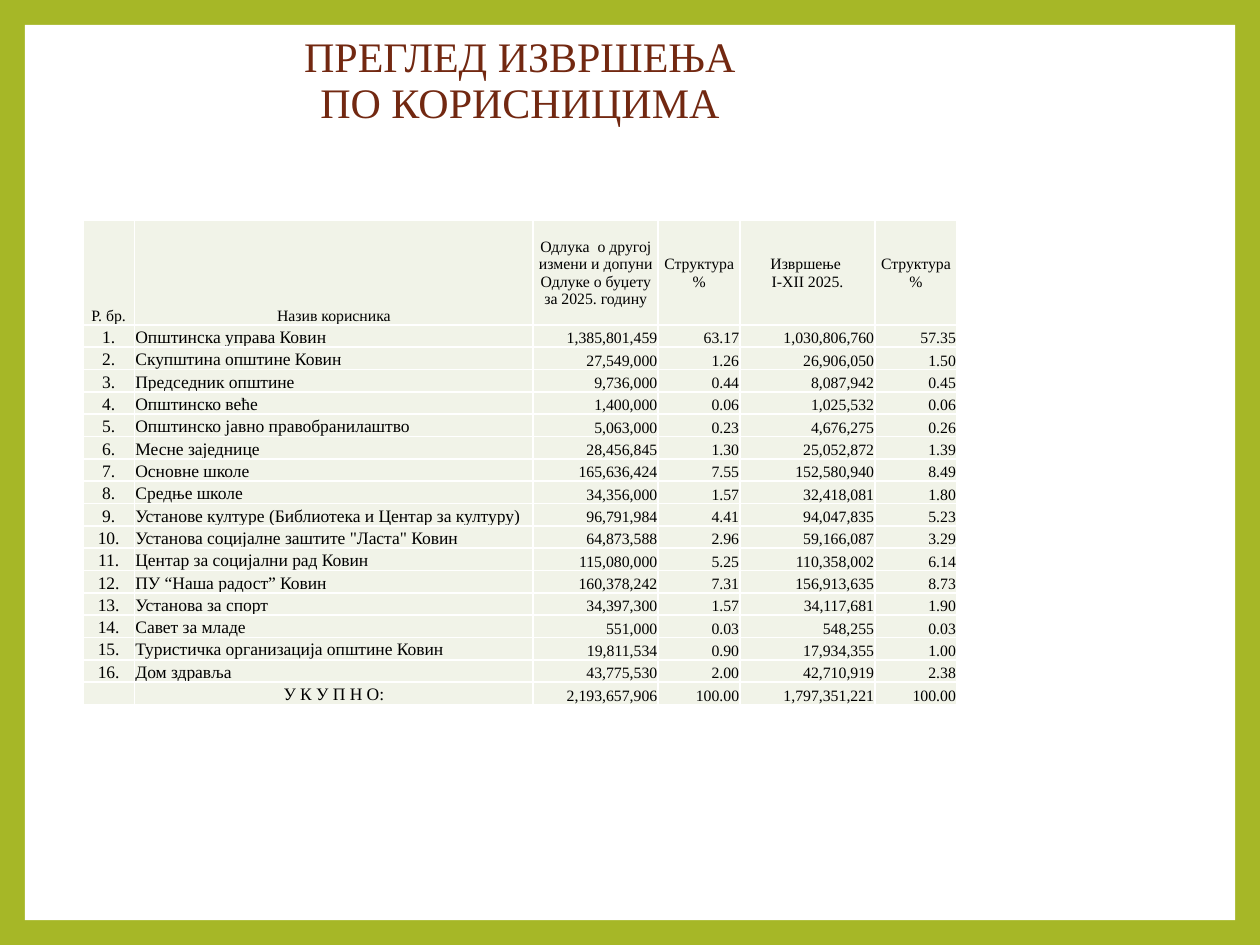
from lxml import etree
from pptx import Presentation
from pptx.dml.color import RGBColor
from pptx.enum import shapes, text
from pptx.oxml.ns import qn
from pptx.util import Cm, Pt

# Content ("\v" is a line break)
TITLE = "ПРЕГЛЕД ИЗВРШЕЊА\vПО КОРИСНИЦИМА"
HEADER = (
    "Р. бр.", "Назив корисника",
    "Одлука  о другој измени и допуни Одлуке о буџету за 2025. годину",
    "Структура\v%", "Извршење \vI-XII 2025.", "Структура\v%",
)
USERS = [
    ("Општинска управа Ковин", "1,385,801,459", "63.17", "1,030,806,760", "57.35"),
    ("Скупштина општине Ковин", "27,549,000", "1.26", "26,906,050", "1.50"),
    ("Председник општине", "9,736,000", "0.44", "8,087,942", "0.45"),
    ("Општинско веће", "1,400,000", "0.06", "1,025,532", "0.06"),
    ("Општинско јавно правобранилаштво", "5,063,000", "0.23", "4,676,275", "0.26"),
    ("Месне заједнице", "28,456,845", "1.30", "25,052,872", "1.39"),
    ("Основне школе", "165,636,424", "7.55", "152,580,940", "8.49"),
    ("Средње школе", "34,356,000", "1.57", "32,418,081", "1.80"),
    ("Установе културе (Библиотека и Центар за културу)",
     "96,791,984", "4.41", "94,047,835", "5.23"),
    ('Установа социјалне заштите "Ласта" Ковин',
     "64,873,588", "2.96", "59,166,087", "3.29"),
    ("Центар за социјални рад Ковин", "115,080,000", "5.25", "110,358,002", "6.14"),
    ("ПУ “Наша радост” Ковин", "160,378,242", "7.31", "156,913,635", "8.73"),
    ("Установа за спорт", "34,397,300", "1.57", "34,117,681", "1.90"),
    ("Савет за младе", "551,000", "0.03", "548,255", "0.03"),
    ("Туристичка организација општине Ковин",
     "19,811,534", "0.90", "17,934,355", "1.00"),
    ("Дом здравља", "43,775,530", "2.00", "42,710,919", "2.38"),
]
TOTAL = ("", "У К У П Н О:", "2,193,657,906", "100.00", "1,797,351,221", "100.00")

# Style
FONT = "Times New Roman"
COLORS = {"frame": "A6B727", "page": "FFFFFF", "title": "722811",
          "cell": "F1F3E8", "border": "FFFFFF", "text": "000000"}
COLUMN_WIDTHS = (1.04, 8.04, 2.52, 1.65, 2.72, 1.65)
HEADER_HEIGHT, ROW_HEIGHT = 2.1, 0.45
FRAME_WIDTH = Cm(0.5)
ALIGN, ANCHOR = text.PP_ALIGN, text.MSO_ANCHOR


def color(name):
    return RGBColor.from_string(COLORS[name])


def format_paragraph(paragraph, size, color_name, alignment):
    paragraph.alignment = alignment
    for run in paragraph.runs:
        run.font.name = FONT
        run.font.size = Pt(size)
        run.font.color.rgb = color(color_name)
    if not paragraph.runs:  # keeps an empty cell from stretching its row
        etree.SubElement(paragraph._p, qn("a:endParaRPr"), sz=str(size * 100))


def add_borders(cell):
    properties = cell._tc.get_or_add_tcPr()
    for side in ("lnL", "lnR", "lnT", "lnB"):
        line = etree.SubElement(properties, qn(f"a:{side}"), w=str(Pt(1)))
        fill = etree.SubElement(line, qn("a:solidFill"))
        etree.SubElement(fill, qn("a:srgbClr"), val=COLORS["border"])


def cell_style(row, column, is_total):
    """Return size, alignment and anchor for a table position."""
    if row == 0:
        return 9, ALIGN.CENTER, ANCHOR.BOTTOM if column < 2 else ANCHOR.MIDDLE
    if column >= 2:
        return 9, ALIGN.RIGHT, ANCHOR.BOTTOM
    centered = column == 0 or is_total
    return 10, ALIGN.CENTER if centered else ALIGN.LEFT, ANCHOR.BOTTOM


def fill_cell(cell, content, size, alignment, anchor):
    cell.text_frame.text = content
    format_paragraph(cell.text_frame.paragraphs[0], size, "text", alignment)
    cell.vertical_anchor = anchor
    cell.margin_left = cell.margin_right = cell.margin_top = Cm(0.02)
    cell.margin_bottom = 0
    add_borders(cell)
    cell.fill.solid()
    cell.fill.fore_color.rgb = color("cell")


def main():
    presentation = Presentation()
    presentation.slide_width, presentation.slide_height = Cm(25.4), Cm(19.05)
    slide = presentation.slides.add_slide(presentation.slide_layouts[6])

    # Green frame around a white page
    slide.background.fill.solid()
    slide.background.fill.fore_color.rgb = color("frame")
    page = slide.shapes.add_shape(
        shapes.MSO_SHAPE.RECTANGLE, FRAME_WIDTH, FRAME_WIDTH,
        presentation.slide_width - 2 * FRAME_WIDTH,
        presentation.slide_height - 2 * FRAME_WIDTH)
    page.shadow.inherit = False
    page.fill.solid()
    page.fill.fore_color.rgb = color("page")
    page.line.fill.background()

    # Title
    title = slide.shapes.add_textbox(0, Cm(0.25), Cm(20.96), Cm(2.8))
    title.text_frame.word_wrap = True
    title.text_frame.vertical_anchor = ANCHOR.MIDDLE
    title.text_frame.text = TITLE
    paragraph = title.text_frame.paragraphs[0]
    paragraph.line_spacing = 0.9
    format_paragraph(paragraph, 24, "title", ALIGN.CENTER)

    # Table
    numbered = [(f"{number}.", *user) for number, user in enumerate(USERS, 1)]
    rows = [HEADER, *numbered, TOTAL]
    heights = [HEADER_HEIGHT] + [ROW_HEIGHT] * (len(rows) - 1)
    table = slide.shapes.add_table(
        len(rows), len(HEADER), Cm(1.67), Cm(4.45),
        Cm(sum(COLUMN_WIDTHS)), Cm(sum(heights))).table
    table.first_row = table.horz_banding = False
    for column, width in zip(table.columns, COLUMN_WIDTHS):
        column.width = Cm(width)
    for row, height in zip(table.rows, heights):
        row.height = Cm(height)
    for row_index, row in enumerate(rows):
        for column_index, content in enumerate(row):
            style = cell_style(row_index, column_index, row is TOTAL)
            fill_cell(table.cell(row_index, column_index), content, *style)

    presentation.save("out.pptx")


if __name__ == "__main__":
    main()
